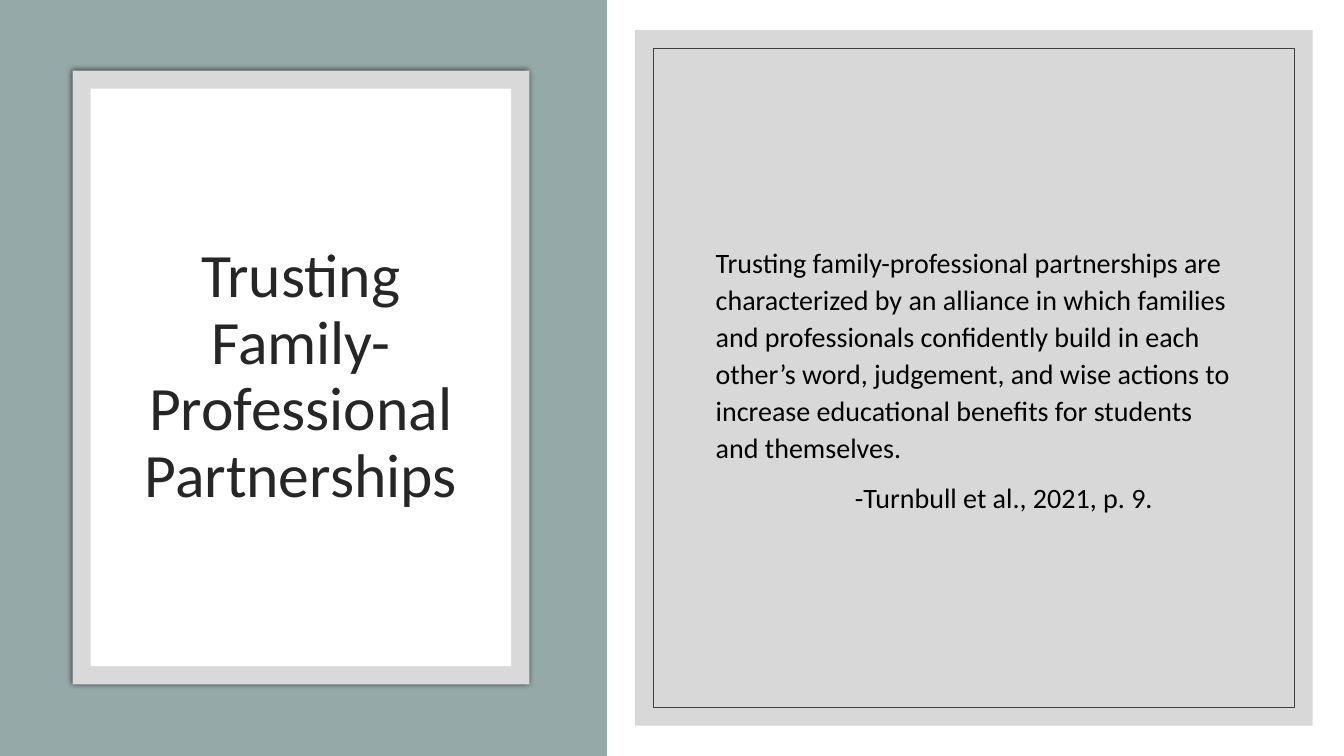
from lxml.etree import SubElement
from pptx import Presentation
from pptx.dml.color import RGBColor
from pptx.enum.shapes import MSO_SHAPE
from pptx.enum.text import MSO_ANCHOR, PP_ALIGN
from pptx.oxml.ns import qn
from pptx.util import Inches, Pt

WHITE = RGBColor(0xFF, 0xFF, 0xFF)
BLACK = RGBColor(0x00, 0x00, 0x00)
SAGE = RGBColor(0x96, 0xA9, 0xA9)
LIGHT_GRAY = RGBColor(0xD9, 0xD9, 0xD9)
MID_GRAY = RGBColor(0xBF, 0xBF, 0xBF)
DARK_GRAY = RGBColor(0x40, 0x40, 0x40)
INK = RGBColor(0x26, 0x26, 0x26)
FRAME = 0.18

TITLE = "Trusting Family-Professional Partnerships"
QUOTE = ("Trusting family-professional partnerships are characterized by an "
         "alliance in which families and professionals confidently build in each "
         "other’s word, judgement, and wise actions to increase educational "
         "benefits for students and themselves.")
SOURCE = "-Turnbull et al., 2021, p. 9."


def inset(box, dx, dy):
    x, y, w, h = box
    return x + dx, y + dy, w - 2 * dx, h - 2 * dy


def add_rect(s, box, fill=None, line=None):
    sp = s.shapes.add_shape(MSO_SHAPE.RECTANGLE, *map(Inches, box))
    sp.shadow.inherit = False
    if fill is None:
        sp.fill.background()
    else:
        sp.fill.solid()
        sp.fill.fore_color.rgb = fill
    if line is None:
        sp.line.fill.background()
    else:
        sp.line.color.rgb = line
        sp.line.width = Pt(0.5)
    return sp


def set_opacity(sp, percent):
    color = sp._element.spPr.find(qn("a:solidFill"))[0]
    SubElement(color, qn("a:alpha"), val=str(percent * 1000))


def add_glow_shadow(sp, blur, percent):
    """Give the shape a soft black shadow without offset."""
    effects = sp._element.spPr.find(qn("a:effectLst"))
    shadow = SubElement(effects, qn("a:outerShdw"), blurRad=str(Pt(blur)),
                        dist="0", dir="0", algn="ctr", rotWithShape="0")
    color = SubElement(shadow, qn("a:srgbClr"), val=str(BLACK))
    SubElement(color, qn("a:alpha"), val=str(percent * 1000))


def add_text(s, box, paragraphs, size, color, align=PP_ALIGN.LEFT,
             spacing=1.0, before=0):
    """Add middle-anchored text; paragraphs are (text, left margin) pairs."""
    tf = s.shapes.add_textbox(*map(Inches, box)).text_frame
    tf.word_wrap = True
    tf.vertical_anchor = MSO_ANCHOR.MIDDLE
    for i, (text, margin) in enumerate(paragraphs):
        p = tf.paragraphs[0] if i == 0 else tf.add_paragraph()
        p.alignment = align
        p.line_spacing = spacing
        p.space_before = Pt(before)
        if margin:
            p._p.get_or_add_pPr().set("marL", str(Inches(margin)))
        r = p.add_run()
        r.text = text
        r.font.name = "Calibri"
        r.font.size = Pt(size)
        r.font.color.rgb = color


def add_title_panel(s, box):
    add_rect(s, box, SAGE)
    x, y, w, h = box
    card = (x + 0.72, y + 0.7, 4.53, 6.09)
    add_glow_shadow(add_rect(s, card, LIGHT_GRAY), blur=4, percent=66)
    page = inset(card, FRAME, FRAME)
    add_rect(s, page, WHITE)
    add_text(s, inset(page, 0.18, 0.41), [(TITLE, 0)], 44, INK,
             align=PP_ALIGN.CENTER, spacing=0.9)


def add_quote_panel(s, box):
    set_opacity(add_rect(s, box, MID_GRAY), 60)
    add_rect(s, inset(box, FRAME, FRAME), line=DARK_GRAY)
    add_text(s, inset(box, 0.7, 0.72), [(QUOTE, 0), (SOURCE, 1.38)], 20, BLACK,
             spacing=1.1, before=9)


def main():
    prs = Presentation()
    prs.slide_width, prs.slide_height = Inches(13.33), Inches(7.5)
    s = prs.slides.add_slide(prs.slide_layouts[6])
    add_title_panel(s, (0, 0, 6.02, 7.5))
    add_quote_panel(s, (6.3, 0.3, 6.72, 6.9))
    prs.save("out.pptx")


if __name__ == "__main__":
    main()
